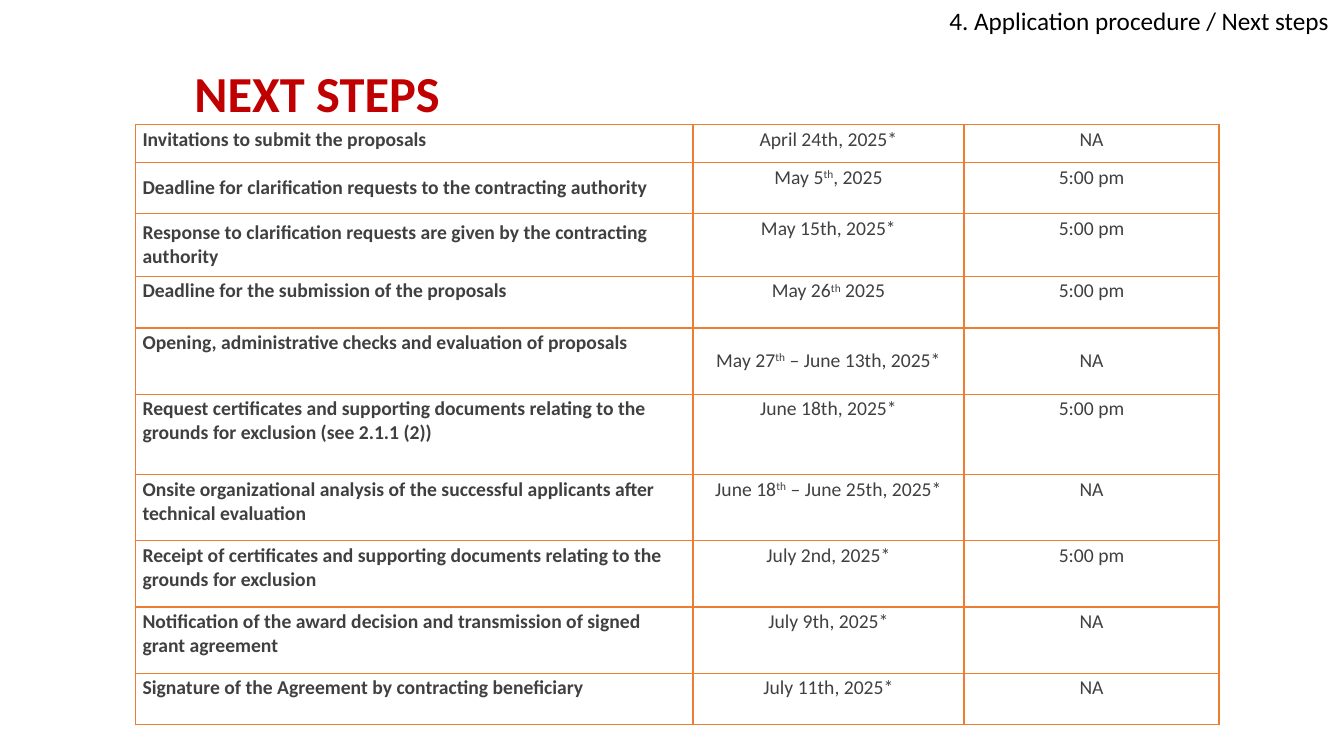
from lxml import etree
from pptx import Presentation
from pptx.dml import color
from pptx.enum import text
from pptx.oxml import ns
from pptx.util import Pt

ORANGE, RED, GREY, BLACK = "ED7D31", "C00000", "404040", "000000"
TOP, MIDDLE = text.MSO_ANCHOR.TOP, text.MSO_ANCHOR.MIDDLE
LEFT, CENTER = text.PP_ALIGN.LEFT, text.PP_ALIGN.CENTER
COLUMNS = [398.16, 193.68, 182.16]
STEPS = [
    (26.8, "Invitations to submit the proposals", "April 24th, 2025*", "NA", TOP, TOP),
    (36.7, "Deadline for clarification requests to the contracting authority",
     "May 5^th^, 2025", "5:00 pm", MIDDLE, TOP),
    (44.7, "Response to clarification requests are given by the contracting authority",
     "May 15th, 2025*", "5:00 pm", MIDDLE, TOP),
    (36.9, "Deadline for the submission of the proposals",
     "May 26^th^ 2025", "5:00 pm", TOP, TOP),
    (47.3, "Opening, administrative checks and evaluation of proposals",
     "May 27^th^ – June 13th, 2025*", "NA", TOP, MIDDLE),
    (57.5, "Request certificates and supporting documents relating to the "
     "grounds for exclusion (see 2.1.1 (2))", "June 18th, 2025*", "5:00 pm", TOP, TOP),
    (47.3, "Onsite organizational analysis of the successful applicants after "
     "technical evaluation", "June 18^th^ – June 25th, 2025*", "NA", TOP, TOP),
    (47.3, "Receipt of certificates and supporting documents relating to the "
     "grounds for exclusion", "July 2nd, 2025*", "5:00 pm", TOP, TOP),
    (47.3, "Notification of the award decision and transmission of signed "
     "grant agreement", "July 9th, 2025*", "NA", TOP, TOP),
    (36.9, "Signature of the Agreement by contracting beneficiary",
     "July 11th, 2025*", "NA", TOP, TOP),
]


def rgb(value):
    """Turn a hex string into a colour."""
    return color.RGBColor.from_string(value)


def write(tf, content, size=14, fill=GREY, bold=False, align=LEFT, spacing=None):
    """Write one paragraph, raising the parts between carets."""
    p = tf.paragraphs[0]
    p.alignment = align
    p.line_spacing = spacing
    for i, part in enumerate(content.split("^")):
        r = p.add_run()
        r.text = part
        r.font.name, r.font.size, r.font.bold = "Calibri", Pt(size), bold
        r.font.color.rgb = rgb(fill)
        if i % 2:
            r.font._element.set("baseline", "30000")


def add_label(slide, left, top, width, height, content, wrap=True, **style):
    """Add a text box holding one paragraph."""
    sp = slide.shapes.add_textbox(Pt(left), Pt(top), Pt(width), Pt(height))
    sp.text_frame.word_wrap = wrap
    write(sp.text_frame, content, **style)


def set_borders(cell, value, width):
    """Draw all four borders of a cell."""
    tcPr = cell._tc.get_or_add_tcPr()
    for side in ("a:lnL", "a:lnR", "a:lnT", "a:lnB"):
        ln = etree.SubElement(tcPr, ns.qn(side), w=str(Pt(width)))
        fill = etree.SubElement(ln, ns.qn("a:solidFill"))
        etree.SubElement(fill, ns.qn("a:srgbClr"), val=value)


def fill_cell(cell, content, anchor, **style):
    """Format a table cell and write its text."""
    set_borders(cell, ORANGE, 1)
    cell.fill.background()
    cell.margin_left = cell.margin_right = Pt(5)
    cell.margin_top = cell.margin_bottom = Pt(2.2)
    cell.vertical_anchor = anchor
    write(cell.text_frame, content, **style)


def add_schedule(slide, left, top):
    """Add the table of steps, dates and times."""
    height = sum(step[0] for step in STEPS)
    frame = slide.shapes.add_table(len(STEPS), len(COLUMNS), Pt(left), Pt(top),
                                   Pt(sum(COLUMNS)), Pt(height))
    table = frame.table
    table.first_row = table.horz_banding = False
    for column, width in zip(table.columns, COLUMNS):
        column.width = Pt(width)
    for row, (height, step, date, time, step_anchor, date_anchor) in zip(table.rows, STEPS):
        row.height = Pt(height)
        fill_cell(row.cells[0], step, step_anchor, bold=True)
        fill_cell(row.cells[1], date, date_anchor, align=CENTER)
        fill_cell(row.cells[2], time, date_anchor, align=CENTER)


def main():
    """Build the slide and save it."""
    prs = Presentation()
    prs.slide_width, prs.slide_height = Pt(960), Pt(540)
    slide = prs.slides.add_slide(prs.slide_layouts[6])
    add_label(slide, 131.8, 46, 583, 90, "NEXT STEPS",
              size=36, fill=RED, bold=True, spacing=0.9)
    add_schedule(slide, 96.8, 89.2)
    add_label(slide, 671, 0, 289, 29, "4. Application procedure / Next steps",
              wrap=False, size=18, fill=BLACK)
    prs.save("out.pptx")


if __name__ == "__main__":
    main()
